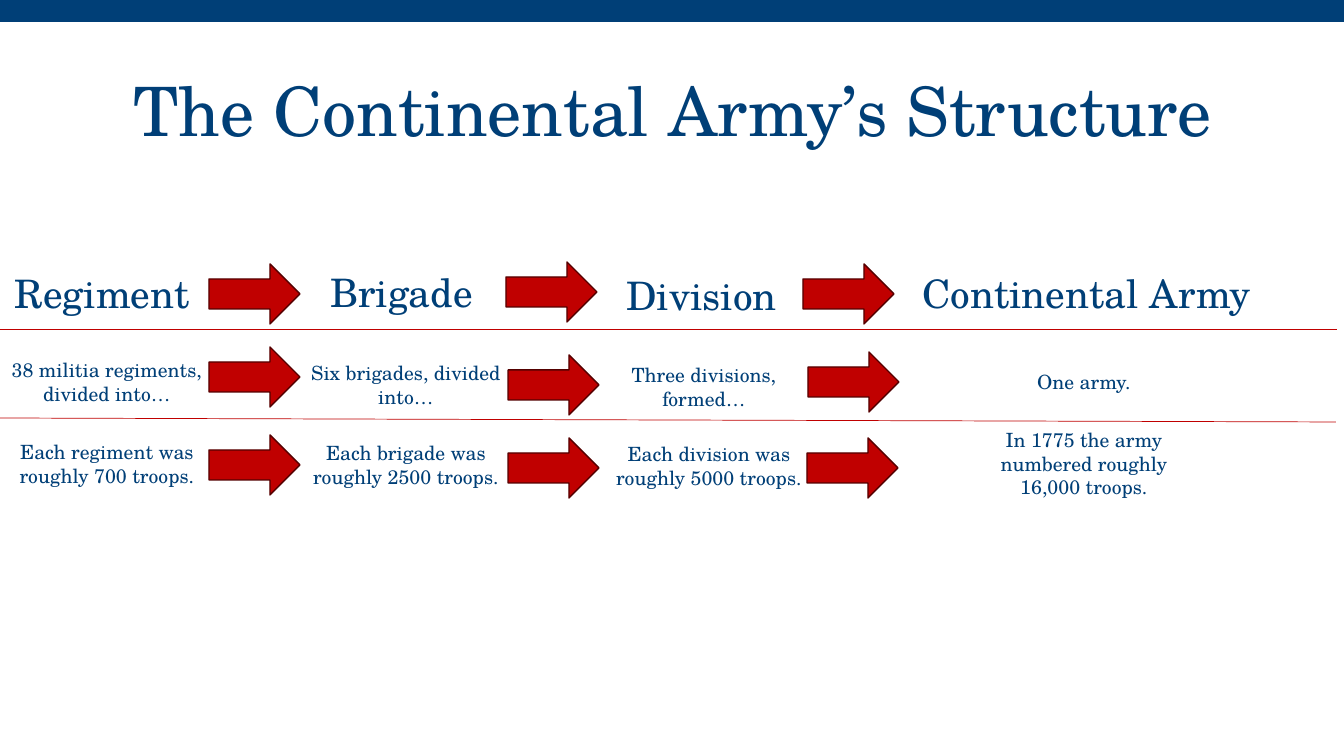
"""Build the slide on the structure of the Continental Army."""
from dataclasses import dataclass

from lxml import etree
from pptx import Presentation
from pptx.dml.color import RGBColor
from pptx.enum.shapes import MSO_CONNECTOR, MSO_SHAPE
from pptx.enum.text import MSO_ANCHOR, MSO_AUTO_SIZE, PP_ALIGN
from pptx.oxml.ns import qn
from pptx.util import Pt

RECT, ARROW = MSO_SHAPE.RECTANGLE, MSO_SHAPE.RIGHT_ARROW
STRAIGHT = MSO_CONNECTOR.STRAIGHT
TOP, MIDDLE = MSO_ANCHOR.TOP, MSO_ANCHOR.MIDDLE
CENTER = PP_ALIGN.CENTER
GROW = MSO_AUTO_SIZE.SHAPE_TO_FIT_TEXT


@dataclass(frozen=True)
class Theme:
    font: str = "TeX Gyre Schola"
    navy: RGBColor = RGBColor(0x00, 0x3F, 0x77)
    red: RGBColor = RGBColor(0xC0, 0x00, 0x00)
    maroon: RGBColor = RGBColor(0x54, 0x00, 0x00)
    title: float = 48.6
    heading: int = 28
    body: int = 14
    rule: float = 0.5
    outline: int = 1


THEME = Theme()
W, H = 1344, 756
EMU = 12192000 / W
BAR_H = 22
ARROW_W, ARROW_H = 91, 60

TITLE = ("The Continental Army’s Structure", (93, 81, 1159, 66))
ROWS = [
    {
        "size": THEME.heading,
        "cells": [
            ("Regiment", (-5, 264, 214, 57)),
            ("Brigade", (299, 263, 205, 57)),
            ("Division", (599, 266, 205, 57)),
            ("Continental Army", (899, 264, 375, 57)),
        ],
        "arrows": [(209, 264), (506, 262), (803, 264)],
    },
    {
        "size": THEME.body,
        "cells": [
            ("38 militia regiments, divided into…", (0, 353, 214, 57)),
            ("Six brigades, divided into…", (299, 356, 214, 57)),
            ("Three divisions, formed…", (597, 358, 214, 57)),
            ("One army.", (977, 365, 214, 34)),
        ],
        "arrows": [(209, 347), (508, 355), (808, 352)],
    },
    {
        "size": THEME.body,
        "cells": [
            ("Each regiment was roughly 700 troops.", (0, 435, 214, 57)),
            ("Each brigade was roughly 2500 troops.", (299, 436, 214, 57)),
            ("Each division was roughly 5000 troops.", (602, 437, 214, 57)),
            ("In 1775 the army numbered roughly 16,000 troops.", (977, 423, 214, 82)),
        ],
        "arrows": [(209, 435), (508, 438), (807, 438)],
    },
]
RULES = [(-8, 329, 1337, 329), (-9, 418, 1336, 422)]


def px(*values):
    return [round(v * EMU) for v in values]


def add_text(s, text, box, size, anchor=TOP):
    sp = s.shapes.add_textbox(*px(*box))
    tf = sp.text_frame
    tf.word_wrap = True
    tf.vertical_anchor = anchor
    p = tf.paragraphs[0]
    p.text = text
    p.alignment = CENTER
    p.font.name = THEME.font
    p.font.size = Pt(size)
    p.font.color.rgb = THEME.navy
    return tf


def add_block(s, kind, box, fill, line=None):
    sp = s.shapes.add_shape(kind, *px(*box))
    sp.shadow.inherit = False
    sp.fill.solid()
    sp.fill.fore_color.rgb = fill
    if line is None:
        sp.line.fill.background()
    else:
        sp.line.color.rgb = line
        sp.line.width = Pt(THEME.outline)


def add_rule(s, ends):
    cx = s.shapes.add_connector(STRAIGHT, *px(*ends))
    cx.line.color.rgb = THEME.red
    cx.line.width = Pt(THEME.rule)
    etree.SubElement(cx._element.spPr, qn("a:effectLst"))


def main():
    prs = Presentation()
    prs.slide_width, prs.slide_height = px(W, H)
    s = prs.slides.add_slide(prs.slide_layouts[6])

    add_block(s, RECT, (0, 0, W, BAR_H), THEME.navy)
    title = add_text(s, *TITLE, THEME.title, MIDDLE)
    title.paragraphs[0].line_spacing = 0.9

    for row in ROWS:
        for text, box in row["cells"]:
            add_text(s, text, box, row["size"]).auto_size = GROW
    for ends in RULES:
        add_rule(s, ends)
    for row in ROWS:
        for x, y in row["arrows"]:
            add_block(s, ARROW, (x, y, ARROW_W, ARROW_H), THEME.red, THEME.maroon)

    prs.save("out.pptx")


if __name__ == "__main__":
    main()
